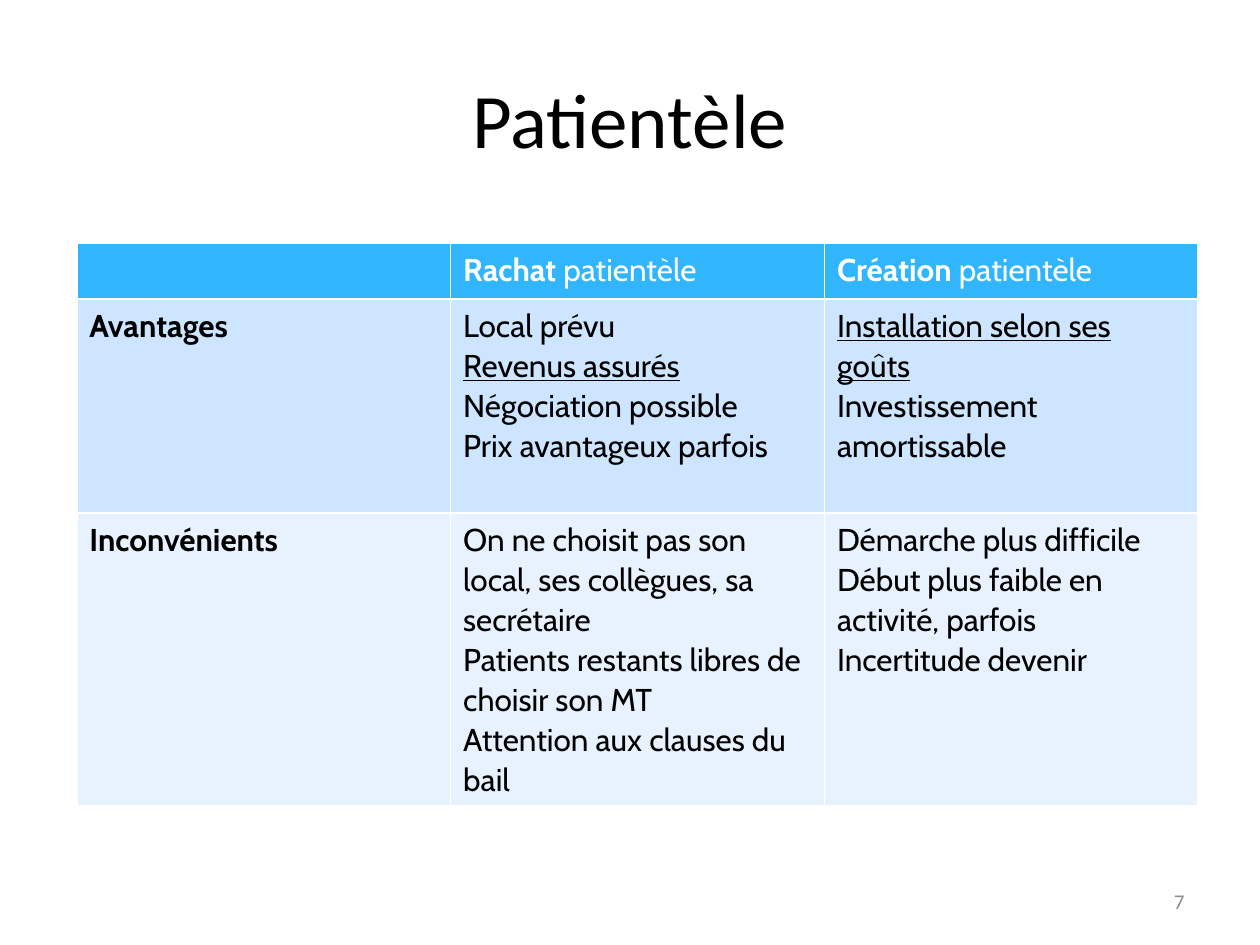
import pptx
import pptx.dml.color
import pptx.enum.text
import pptx.oxml
import pptx.oxml.ns
import pptx.util

ALIGN = pptx.enum.text.PP_ALIGN
HEADER, ADVANTAGE, DRAWBACK = "31B6FD", "CDE5FE", "E7F2FE"
BLACK, WHITE, GREY = "000000", "FFFFFF", "8C8C8C"


def color(hex_value):
    return pptx.dml.color.RGBColor.from_string(hex_value)


class SlideBuilder:
    heading_font = "Calibri"
    table_font = "Cabin"
    table_size = 18
    line_spacing = 1.04
    border_width = 0.91

    def __init__(self, deck):
        self.deck = deck
        self.slide = deck.slides.add_slide(deck.slide_layouts[6])

    def area(self, left, top, width, height):
        """Turn shares of the slide's size into lengths."""
        across, down = self.deck.slide_width, self.deck.slide_height
        return (int(left * across), int(top * down),
                int(width * across), int(height * down))

    def add_run(self, para, text, font, size, hex_value, style=""):
        """Add one run; style may hold b (bold) and u (underlined)."""
        span = para.add_run()
        span.text = text
        span.font.name = font
        span.font.size = pptx.util.Pt(size)
        span.font.color.rgb = color(hex_value)
        span.font.bold = "b" in style
        span.font.underline = "u" in style

    def add_text(self, area, text, size, hex_value, align):
        box = self.slide.shapes.add_textbox(*self.area(*area))
        box.text_frame.word_wrap = True
        box.text_frame.vertical_anchor = pptx.enum.text.MSO_ANCHOR.MIDDLE
        para = box.text_frame.paragraphs[0]
        para.alignment = align
        self.add_run(para, text, self.heading_font, size, hex_value)

    def add_borders(self, cell, hex_value):
        properties = cell._tc.get_or_add_tcPr()
        width = pptx.util.Pt(self.border_width)
        for side in ("lnL", "lnR", "lnT", "lnB"):
            properties.append(pptx.oxml.parse_xml(
                f'<a:{side} {pptx.oxml.ns.nsdecls("a")} w="{width}"><a:solidFill>'
                f'<a:srgbClr val="{hex_value}"/></a:solidFill></a:{side}>'))

    def fill_cell(self, cell, paragraphs, fill, text_color):
        self.add_borders(cell, WHITE)
        cell.fill.solid()
        cell.fill.fore_color.rgb = color(fill)
        frame = cell.text_frame
        for index, runs in enumerate(paragraphs):
            para = frame.add_paragraph() if index else frame.paragraphs[0]
            para.line_spacing = self.line_spacing
            for text, style in runs:
                self.add_run(para, text, self.table_font, self.table_size,
                             text_color, style)

    def add_table(self, area, rows):
        """Each row is its share of the table's height, fill, text colour and cells."""
        left, top, width, height = self.area(*area)
        columns = len(rows[0][3])
        table = self.slide.shapes.add_table(
            len(rows), columns, left, top, width, height).table
        table.first_row = table.horz_banding = False
        for column in table.columns:
            column.width = width // columns
        for row, (share, fill, text_color, cells) in zip(table.rows, rows):
            row.height = int(height * share)
            for cell, paragraphs in zip(row.cells, cells):
                self.fill_cell(cell, paragraphs, fill, text_color)


def lines(*texts, style=""):
    """Make one paragraph of a single run for each text."""
    return [[(text, style)] for text in texts]


def main():
    deck = pptx.Presentation()
    deck.slide_width = pptx.util.Inches(10)
    deck.slide_height = pptx.util.Inches(7.5)
    builder = SlideBuilder(deck)

    builder.add_text((0.05, 0.04, 0.9, 0.17), "Patientèle", 44, BLACK, ALIGN.CENTER)
    builder.add_table((0.061, 0.257, 0.89, 0.596), [
        (0.1, HEADER, WHITE, [
            [],
            [[("Rachat", "b"), (" patientèle", "")]],
            [[("Création", "b"), (" patientèle", "")]],
        ]),
        (0.38, ADVANTAGE, BLACK, [
            lines("Avantages", style="b"),
            lines("Local prévu")
            + lines("Revenus assurés", style="u")
            + lines("Négociation possible", "Prix avantageux parfois"),
            lines("Installation selon ses goûts", style="u")
            + lines("Investissement amortissable"),
        ]),
        (0.52, DRAWBACK, BLACK, [
            lines("Inconvénients", style="b"),
            lines("On ne choisit pas son local, ses collègues, sa secrétaire",
                  "Patients restants libres de choisir son MT",
                  "Attention aux clauses du bail"),
            lines("Démarche plus difficile",
                  "Début plus faible en activité, parfois",
                  "Incertitude devenir"),
        ]),
    ])
    builder.add_text((0.717, 0.927, 0.233, 0.053), "7", 12, GREY, ALIGN.RIGHT)
    deck.save("out.pptx")


if __name__ == "__main__":
    main()
